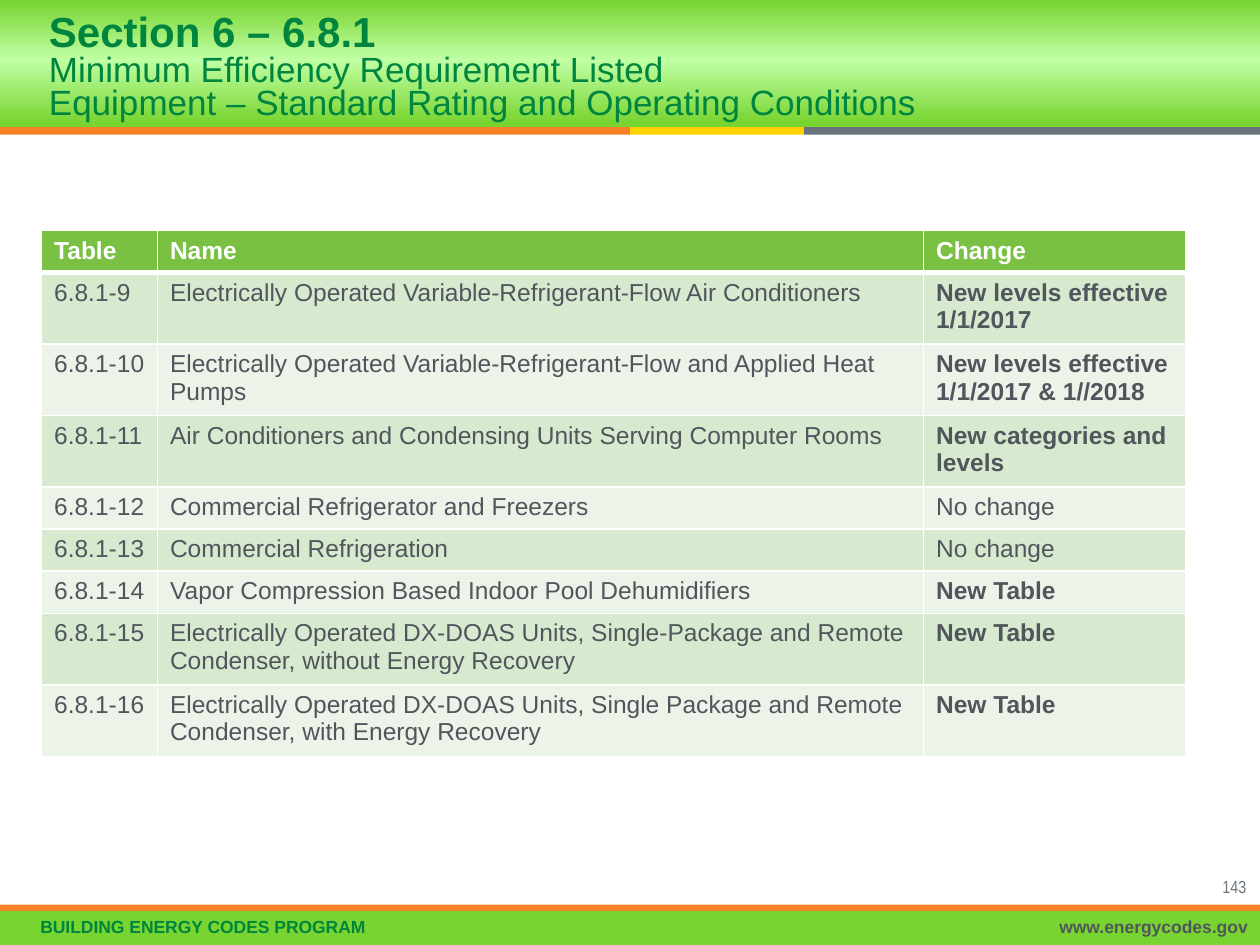
from dataclasses import dataclass

import pptx
import pptx.dml.color
import pptx.enum.shapes
import pptx.enum.text
import pptx.oxml
import pptx.oxml.ns
import pptx.util
from copy import deepcopy
from pptx.dml.color import RGBColor
from pptx.util import Inches

LIME = RGBColor(0x78, 0xD4, 0x30)
PALE_LIME = RGBColor(0xC0, 0xFF, 0xA4)
ORANGE = RGBColor(0xF5, 0x80, 0x25)
YELLOW = RGBColor(0xFF, 0xD2, 0x00)
GRAY = RGBColor(0x6A, 0x73, 0x7B)
DARK_GRAY = RGBColor(0x50, 0x56, 0x5C)
GREEN = RGBColor(0x00, 0x85, 0x3F)
WHITE = RGBColor(0xFF, 0xFF, 0xFF)
HEADER_FILL = RGBColor(0x7A, 0xC1, 0x43)
BAND_FILLS = (RGBColor(0xD7, 0xE9, 0xCF), RGBColor(0xEC, 0xF4, 0xE9))

LEFT = pptx.enum.text.PP_ALIGN.LEFT
RIGHT = pptx.enum.text.PP_ALIGN.RIGHT
TOP = pptx.enum.text.MSO_ANCHOR.TOP
MIDDLE = pptx.enum.text.MSO_ANCHOR.MIDDLE


@dataclass(frozen=True)
class Bar:
    left: float
    top: float
    width: float
    height: float
    color: RGBColor


@dataclass(frozen=True)
class EquipmentTable:
    number: int
    name: str
    change: str


BARS = (
    Bar(0, 7.23, 10, 0.27, LIME),
    Bar(0, 1.01, 5, 0.06, ORANGE),
    Bar(5, 1.01, 1.38, 0.06, YELLOW),
    Bar(6.38, 1.01, 3.62, 0.06, GRAY),
    Bar(0, 7.18, 10, 0.05, ORANGE),
)
COLUMN_WIDTHS = (0.92, 6.08, 2.08)
ROW_HEIGHT = 0.31
HEADINGS = ("Table", "Name", "Change")
NO_CHANGE = "No change"
EQUIPMENT = (
    EquipmentTable(9, "Electrically Operated Variable-Refrigerant-Flow Air Conditioners",
                   "New levels effective 1/1/2017"),
    EquipmentTable(10, "Electrically Operated Variable-Refrigerant-Flow and Applied Heat Pumps",
                   "New levels effective 1/1/2017 & 1//2018"),
    EquipmentTable(11, "Air Conditioners and Condensing Units Serving Computer Rooms",
                   "New categories and levels"),
    EquipmentTable(12, "Commercial Refrigerator and Freezers", NO_CHANGE),
    EquipmentTable(13, "Commercial Refrigeration", NO_CHANGE),
    EquipmentTable(14, "Vapor Compression Based Indoor Pool Dehumidifiers", "New Table"),
    EquipmentTable(15, "Electrically Operated DX-DOAS Units, Single-Package and Remote "
                   "Condenser, without Energy Recovery", "New Table"),
    EquipmentTable(16, "Electrically Operated DX-DOAS Units, Single Package and Remote "
                   "Condenser, with Energy Recovery", "New Table"),
)


def write_text(paragraph, text: str, *, size: float, color: RGBColor,
               bold: bool = False, font: str = "Arial") -> None:
    """Append text to the paragraph, turning newlines into line breaks."""
    for index, line in enumerate(text.split("\n")):
        if index:
            paragraph.add_line_break()
        if line:
            run = paragraph.add_run()
            run.text = line
            run.font.name = font
            run.font.size = pptx.util.Pt(size)
            run.font.bold = bold
            run.font.color.rgb = color


def add_text_box(slide, left: float, top: float, width: float, height: float, *,
                 align=LEFT, anchor=TOP, line_spacing: float = 1.0,
                 left_margin: float = 0.1):
    """Add an empty text box and return its first paragraph."""
    box = slide.shapes.add_textbox(Inches(left), Inches(top), Inches(width), Inches(height))
    frame = box.text_frame
    frame.word_wrap = True
    frame.vertical_anchor = anchor
    frame.margin_left = Inches(left_margin)
    paragraph = frame.paragraphs[0]
    paragraph.alignment = align
    paragraph.line_spacing = line_spacing
    return paragraph


def add_bar(slide, bar: Bar):
    shape = slide.shapes.add_shape(
        pptx.enum.shapes.MSO_SHAPE.RECTANGLE,
        Inches(bar.left), Inches(bar.top), Inches(bar.width), Inches(bar.height))
    shape.shadow.inherit = False
    shape.line.fill.background()
    shape.fill.solid()
    shape.fill.fore_color.rgb = bar.color
    return shape


def add_header_band(slide) -> None:
    """Add the title band, lime at both edges and pale in the middle."""
    fill = add_bar(slide, Bar(-0.03, 0, 10.03, 1.01, LIME)).fill
    fill.gradient()
    fill.gradient_angle = 270
    stop_list = fill._fill._gradFill.gsLst
    stop_list.append(deepcopy(stop_list[-1]))
    for stop, position, color in zip(fill.gradient_stops, (0, 0.47, 0.97),
                                     (LIME, PALE_LIME, LIME)):
        stop.position = position
        stop.color.rgb = color


def set_borders(cell, bottom_width: float) -> None:
    """Give the cell white 1 pt borders and a bottom border of its own width."""
    properties = cell._tc.get_or_add_tcPr()
    for side, width in (("L", 1), ("R", 1), ("T", 1), ("B", bottom_width)):
        properties.append(pptx.oxml.parse_xml(
            f'<a:ln{side} {pptx.oxml.ns.nsdecls("a")} w="{pptx.util.Pt(width)}">'
            f'<a:solidFill><a:srgbClr val="{WHITE}"/></a:solidFill></a:ln{side}>'))


def fill_cell(cell, text: str, *, fill: RGBColor, color: RGBColor, bold: bool,
              bottom_width: float = 1) -> None:
    set_borders(cell, bottom_width)
    cell.fill.solid()
    cell.fill.fore_color.rgb = fill
    write_text(cell.text_frame.paragraphs[0], text, size=14, color=color, bold=bold)


def add_equipment_table(slide) -> None:
    row_count = len(EQUIPMENT) + 1
    table = slide.shapes.add_table(
        row_count, len(HEADINGS), Inches(0.33), Inches(1.83),
        Inches(sum(COLUMN_WIDTHS)), Inches(ROW_HEIGHT * row_count)).table
    for column, width in zip(table.columns, COLUMN_WIDTHS):
        column.width = Inches(width)
    for row in table.rows:
        row.height = Inches(ROW_HEIGHT)
    for column, heading in enumerate(HEADINGS):
        fill_cell(table.cell(0, column), heading, fill=HEADER_FILL, color=WHITE,
                  bold=True, bottom_width=3)
    for index, item in enumerate(EQUIPMENT):
        for column, text in enumerate((f"6.8.1-{item.number}", item.name, item.change)):
            fill_cell(table.cell(index + 1, column), text,
                      fill=BAND_FILLS[index % 2], color=DARK_GRAY,
                      bold=column == 2 and text != NO_CHANGE)


def main() -> None:
    presentation = pptx.Presentation()
    presentation.slide_width = Inches(10)
    presentation.slide_height = Inches(7.5)
    slide = presentation.slides.add_slide(presentation.slide_layouts[6])

    add_header_band(slide)
    for bar in BARS:
        add_bar(slide, bar)

    program = add_text_box(slide, 0.07, 7.24, 7.97, 0.26, line_spacing=0.9, left_margin=0.25)
    write_text(program, "BUILDING ENERGY CODES PROGRAM", size=10, color=GREEN, bold=True)
    website = add_text_box(slide, 5.99, 7.24, 4.01, 0.26, align=RIGHT, line_spacing=0.9)
    write_text(website, "www.energycodes.gov", size=10, color=DARK_GRAY, bold=True)
    page_number = add_text_box(slide, 9.28, 6.9, 0.71, 0.18, align=RIGHT)
    write_text(page_number, "143", size=10, color=GRAY, font="Arial Narrow")

    title = add_text_box(slide, 0.29, 0.04, 9.4, 1.01, anchor=MIDDLE, line_spacing=0.8)
    write_text(title, "Section 6 – 6.8.1\n", size=24, color=GREEN, bold=True)
    write_text(title, "Minimum Efficiency Requirement Listed\n"
               "Equipment – Standard Rating and Operating Conditions", size=20, color=GREEN)

    add_equipment_table(slide)
    presentation.save("out.pptx")


if __name__ == "__main__":
    main()
